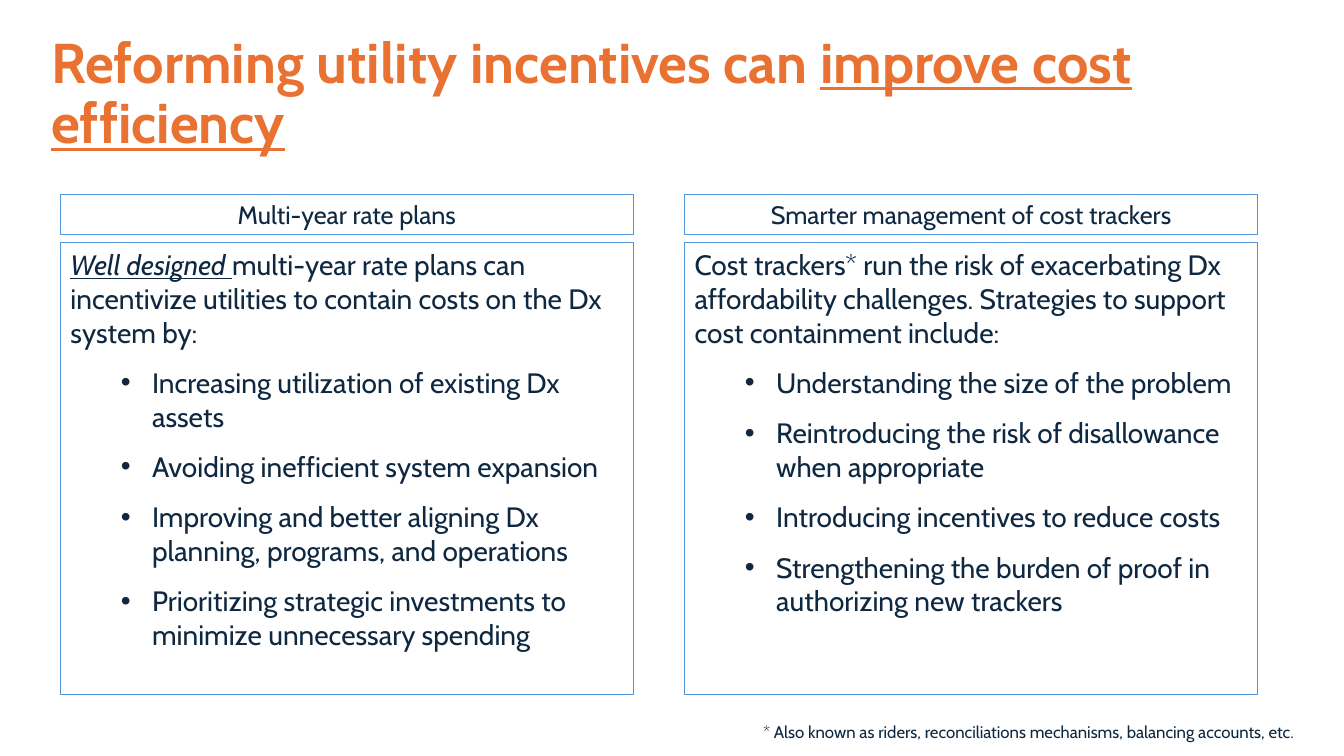
import lxml.etree
import pptx
import pptx.dml.color
import pptx.enum.shapes
import pptx.enum.text
import pptx.oxml.ns
import pptx.util

Inches = pptx.util.Inches
ALIGN = pptx.enum.text.PP_ALIGN
ANCHOR = pptx.enum.text.MSO_ANCHOR
COLORS = {"title": "E97132", "text": "0E2841", "border": "4E95D9"}
FONT = "Cabin"

COLUMN_LEFT, COLUMN_WIDTH, COLUMN_STEP = 0.6, 5.68, 6.19
HEADER_TOP, HEADER_HEIGHT = 1.93, 0.4
BODY_TOP, BODY_HEIGHT = 2.41, 4.48
BULLET_MARGIN, BULLET_HANG = 0.81, 0.31

COLUMNS = [
    (
        "Multi-year rate plans",
        [
            ("Well designed ", {"italic": True, "underline": True}),
            ("multi-year rate plans can incentivize utilities to contain costs on the Dx system by:", {}),
        ],
        [
            "Increasing utilization of existing Dx assets",
            "Avoiding inefficient system expansion",
            "Improving and better aligning Dx planning, programs, and operations",
            "Prioritizing strategic investments to minimize unnecessary spending",
        ],
    ),
    (
        "Smarter management of cost trackers",
        [
            ("Cost trackers* run the risk of exacerbating Dx affordability challenges. "
             "Strategies to support cost containment include:", {}),
        ],
        [
            "Understanding the size of the problem",
            "Reintroducing the risk of disallowance when appropriate",
            "Introducing incentives to reduce costs",
            "Strengthening the burden of proof in authorizing new trackers",
        ],
    ),
]


def write(paragraph, runs, size, color="text", bold=False, align=ALIGN.LEFT,
          space_after=0, line_spacing=1.0, bullet=False):
    """Fill a paragraph with (text, font attributes) runs, optionally as a bullet."""
    if bullet:
        paragraph.level = 1
        properties = paragraph._p.get_or_add_pPr()
        properties.set("marL", str(Inches(BULLET_MARGIN)))
        properties.set("indent", str(-Inches(BULLET_HANG)))
        for tag, name, value in (("a:buFont", "typeface", "Arial"), ("a:buChar", "char", "•")):
            element = lxml.etree.SubElement(properties, pptx.oxml.ns.qn(tag))
            element.set(name, value)
    paragraph.alignment = align
    paragraph.space_after = pptx.util.Pt(space_after)
    paragraph.line_spacing = line_spacing
    for text, attributes in runs:
        run = paragraph.add_run()
        run.text = text
        run.font.name = FONT
        run.font.size = pptx.util.Pt(size)
        run.font.bold = bold
        run.font.color.rgb = pptx.dml.color.RGBColor.from_string(COLORS[color])
        for name, value in attributes.items():
            setattr(run.font, name, value)


def add_panel(column, top, height, anchor):
    """Add an outlined, unfilled rectangle in a column and return its text frame."""
    shape = slide.shapes.add_shape(
        pptx.enum.shapes.MSO_SHAPE.RECTANGLE,
        Inches(COLUMN_LEFT + column * COLUMN_STEP), Inches(top),
        Inches(COLUMN_WIDTH), Inches(height))
    shape.shadow.inherit = False
    shape.fill.background()
    shape.line.color.rgb = pptx.dml.color.RGBColor.from_string(COLORS["border"])
    shape.line.width = pptx.util.Pt(0.75)
    shape.text_frame.word_wrap = True
    shape.text_frame.vertical_anchor = anchor
    return shape.text_frame


presentation = pptx.Presentation()
presentation.slide_width = Inches(13.33)
presentation.slide_height = Inches(7.5)
slide = presentation.slides.add_slide(presentation.slide_layouts[6])

title = slide.shapes.add_textbox(Inches(0.41), Inches(0.22), Inches(11.5), Inches(1.45))
title.text_frame.word_wrap = True
title.text_frame.vertical_anchor = ANCHOR.MIDDLE
write(title.text_frame.paragraphs[0],
      [("Reforming utility incentives can ", {}), ("improve cost efficiency", {"underline": True})],
      size=40, color="title", bold=True, line_spacing=0.9)

for column, (heading, introduction, bullets) in enumerate(COLUMNS):
    header = add_panel(column, HEADER_TOP, HEADER_HEIGHT, ANCHOR.TOP)
    write(header.paragraphs[0], [(heading, {})], size=18, align=ALIGN.CENTER)
    body = add_panel(column, BODY_TOP, BODY_HEIGHT, ANCHOR.TOP)
    write(body.paragraphs[0], introduction, size=20, space_after=12)
    for bullet in bullets:
        write(body.add_paragraph(), [(bullet, {})], size=20, space_after=12, bullet=True)

footnote = slide.shapes.add_textbox(Inches(7.47), Inches(7.11), Inches(5.85), Inches(0.3))
footnote.text_frame.word_wrap = False
write(footnote.text_frame.paragraphs[0],
      [("* Also known as riders, reconciliations mechanisms, balancing accounts, etc.", {})], size=12)

presentation.save("out.pptx")
